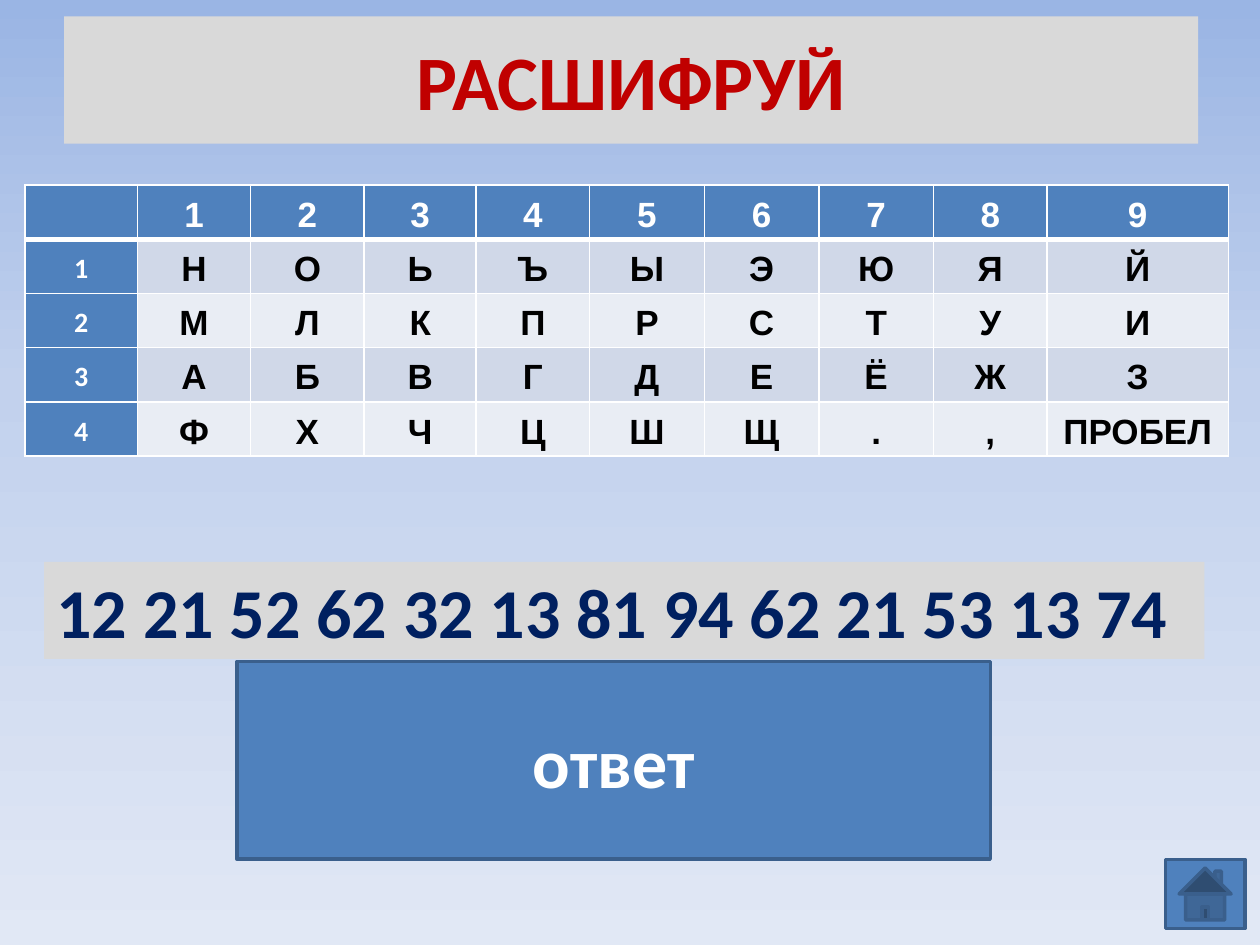
from copy import deepcopy
from typing import NamedTuple

from lxml.etree import SubElement
from pptx import Presentation
from pptx.dml.color import RGBColor
from pptx.enum.shapes import MSO_SHAPE as SHAPE
from pptx.enum.text import MSO_ANCHOR as ANCHOR, PP_ALIGN as ALIGN
from pptx.oxml.ns import qn
from pptx.util import Inches, Pt

COLORS = {
    "panel": "D9D9D9", "title": "C00000", "code": "002060",
    "blue": "4F81BD", "outline": "3A5F8C", "white": "FFFFFF",
    "black": "000000", "odd_row": "D0D8E8", "even_row": "E9EDF4",
}
BACKGROUND = [(0, "9AB5E4"), (0.41, "C2D1ED"), (1, "E1E8F5")]
COL_WIDTHS = [0.89, 0.9, 0.9, 0.89, 0.9, 0.91, 0.91, 0.91, 0.9, 1.44]
ROW_HEIGHT = 0.43
LETTERS = [
    list("НОЬЪЫЭЮЯЙ"),
    list("МЛКПРСТУИ"),
    list("АБВГДЕЁЖЗ"),
    [*"ФХЧЦШЩ.,", "ПРОБЕЛ"],
]


class Box(NamedTuple):
    left: float
    top: float
    width: float
    height: float
    fill: str
    line: str | None = None
    preset: SHAPE = SHAPE.RECTANGLE


TITLE = Box(0.51, 0.13, 9, 1.01, "panel")
CODE = Box(0.35, 4.46, 9.21, 0.77, "panel")
ANSWER = Box(1.88, 5.25, 5.98, 1.57, "blue", "outline")
HOME = Box(9.25, 6.82, 0.63, 0.55, "blue", "outline", SHAPE.ACTION_BUTTON_HOME)


def rgb(name: str) -> RGBColor:
    return RGBColor.from_string(COLORS[name])


def write(tf, text: str, *, size: float, color: str, font: str = "Calibri",
          align=ALIGN.CENTER, spacing: float | None = None) -> None:
    p = tf.paragraphs[0]
    p.alignment = align
    p.line_spacing = spacing
    r = p.add_run()
    r.text = text
    r.font.name, r.font.size, r.font.bold = font, Pt(size), True
    r.font.color.rgb = rgb(color)


def paint(sp, color: str) -> None:
    sp.fill.solid()
    sp.fill.fore_color.rgb = rgb(color)


def add_box(s, box: Box):
    sp = s.shapes.add_shape(box.preset, *map(Inches, box[:4]))
    sp.shadow.inherit = False
    paint(sp, box.fill)
    if box.line:
        sp.line.color.rgb = rgb(box.line)
        sp.line.width = Pt(2)
    else:
        sp.line.fill.background()
    sp.text_frame.word_wrap = True
    return sp


def set_background(s) -> None:
    fill = s.background.fill
    fill.gradient()
    fill.gradient_angle = 270
    first = s.background._cSld.find(".//" + qn("a:gs"))
    first.addnext(deepcopy(first))
    for stop, (position, color) in zip(fill.gradient_stops, BACKGROUND):
        stop.position = position
        stop.color.rgb = RGBColor.from_string(color)


def set_borders(cell, top: float, bottom: float) -> None:
    tc_pr = cell._tc.get_or_add_tcPr()
    for side, width in (("L", 1), ("R", 1), ("T", top), ("B", bottom)):
        ln = SubElement(tc_pr, qn(f"a:ln{side}"), w=str(Pt(width)))
        solid = SubElement(ln, qn("a:solidFill"))
        SubElement(solid, qn("a:srgbClr"), val=COLORS["white"])


def add_key_table(s) -> None:
    rows = [["", *"123456789"]]
    rows += [[str(i), *letters] for i, letters in enumerate(LETTERS, 1)]
    table = s.shapes.add_table(
        len(rows), len(COL_WIDTHS), Inches(0.2), Inches(1.47),
        Inches(sum(COL_WIDTHS)), Inches(ROW_HEIGHT * len(rows))).table
    for col, width in zip(table.columns, COL_WIDTHS):
        col.width = Inches(width)
    for i, row in enumerate(rows):
        table.rows[i].height = Inches(ROW_HEIGHT)
        for j, text in enumerate(row):
            cell = table.cell(i, j)
            heading = i == 0 or j == 0
            set_borders(cell, top=3 if i == 1 else 1, bottom=3 if i == 0 else 1)
            paint(cell, "blue" if heading else "odd_row" if i % 2 else "even_row")
            cell.vertical_anchor = ANCHOR.MIDDLE
            cell.margin_left = cell.margin_right = Inches(0.07)
            cell.margin_top = cell.margin_bottom = 0
            if text:
                write(cell.text_frame, text, size=20 if j else 16,
                      font="Arial" if j else "Calibri", spacing=1.15,
                      color="white" if heading else "black")


def main() -> None:
    prs = Presentation()
    prs.slide_width, prs.slide_height = Inches(10), Inches(7.5)
    s = prs.slides.add_slide(prs.slide_layouts[5])
    set_background(s)

    # Title
    title = s.shapes.title
    title.left, title.top, title.width, title.height = map(Inches, TITLE[:4])
    paint(title, TITLE.fill)
    title.text_frame.vertical_anchor = ANCHOR.MIDDLE
    write(title.text_frame, "РАСШИФРУЙ", size=44, color="title")

    # Cipher key
    add_key_table(s)

    # Coded message
    tf = add_box(s, CODE).text_frame
    tf.vertical_anchor = ANCHOR.TOP
    write(tf, "12 21 52 62 32 13 81 94 62 21 53 13 74",
          size=40, color="code", align=ALIGN.LEFT)

    # Answer cover and home button
    tf = add_box(s, ANSWER).text_frame
    tf.vertical_anchor = ANCHOR.MIDDLE
    write(tf, "ответ", size=40, color="white")
    add_box(s, HOME)

    prs.save("out.pptx")


if __name__ == "__main__":
    main()
